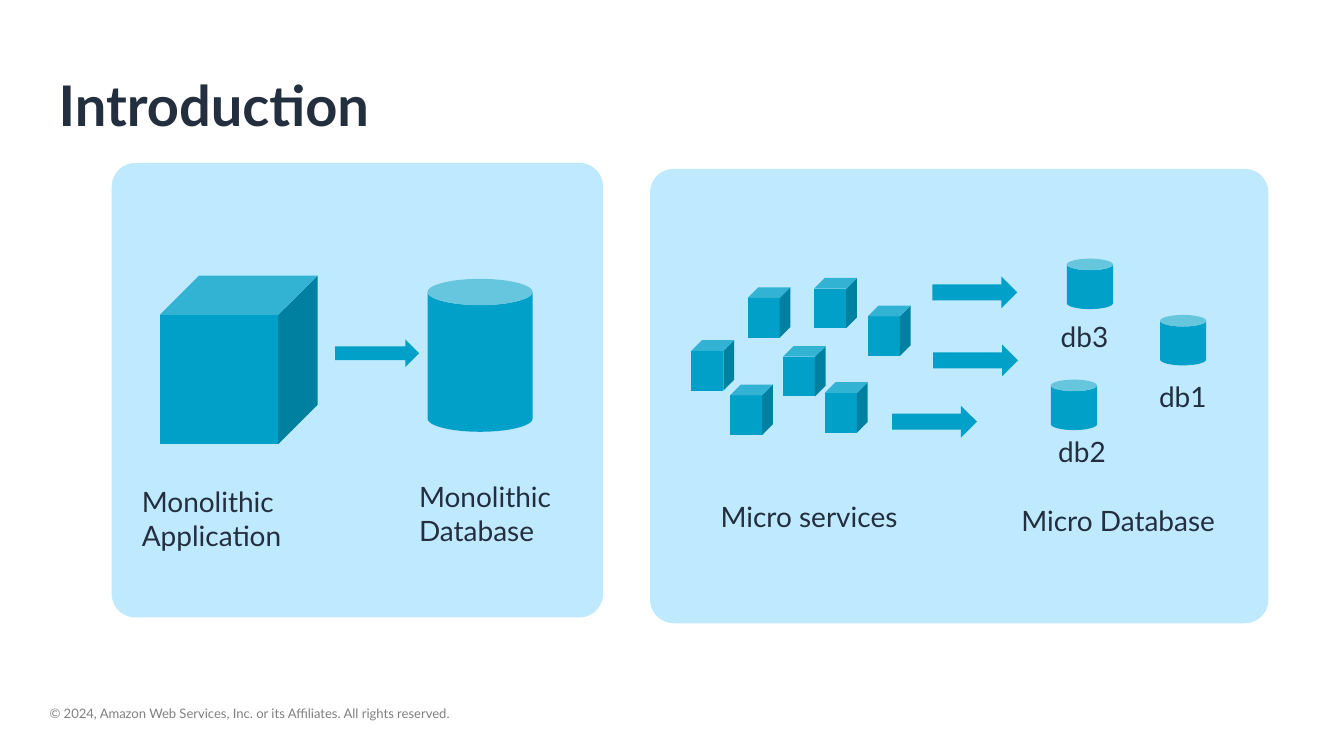
from typing import NamedTuple

from pptx import Presentation
from pptx.dml.color import RGBColor
from pptx.enum.shapes import MSO_SHAPE
from pptx.enum.text import MSO_ANCHOR
from pptx.util import Inches, Pt

COLORS = {"panel": "BFE9FF", "icon": "00A0C8", "ink": "232F3E", "footer": "808080"}
FONT = "Lato"
PANEL_ROUNDING = 0.052


class Icon(NamedTuple):
    kind: MSO_SHAPE
    left: float
    top: float
    width: float
    height: float
    color: str = "icon"


class Label(NamedTuple):
    lines: tuple[str, ...]
    left: float
    top: float
    width: float
    height: float = 0.5
    size: float = 24
    color: str = "ink"
    bold: bool = False
    margin: tuple[float, float] = (0.1, 0.05)
    anchor: MSO_ANCHOR = MSO_ANCHOR.TOP
    wrap: bool = False


PANELS = [
    Icon(MSO_SHAPE.ROUNDED_RECTANGLE, 7.74, 2.01, 7.36, 5.41, "panel"),
    Icon(MSO_SHAPE.ROUNDED_RECTANGLE, 1.33, 1.94, 5.85, 5.41, "panel"),
]
MONOLITH = [
    Icon(MSO_SHAPE.CUBE, 1.9, 3.28, 1.88, 2.01),
    Icon(MSO_SHAPE.RIGHT_ARROW, 3.99, 4.04, 1, 0.33),
    Icon(MSO_SHAPE.CAN, 5.09, 3.32, 1.25, 1.82),
]
SERVICES = [
    Icon(MSO_SHAPE.CUBE, left, top, 0.51, 0.6)
    for left, top in [(8.9, 3.42), (9.69, 3.31), (9.32, 4.12), (9.82, 4.55),
                      (10.33, 3.64), (8.69, 4.58), (8.23, 4.05)]
]
DATABASES = [
    Icon(MSO_SHAPE.CAN, left, top, 0.55, 0.6)
    for left, top in [(12.7, 3.08), (12.51, 4.52), (13.81, 3.75)]
]
ARROWS = [
    Icon(MSO_SHAPE.RIGHT_ARROW, left, top, 1.01, 0.38)
    for left, top in [(11.1, 3.29), (11.11, 4.1), (10.62, 4.83)]
]
LABELS = [
    Label(("© 2024, Amazon Web Services, Inc. or its Affiliates. All rights reserved.",),
          0.59, 8.4, 7.78, 0.19, size=11.2, color="footer", margin=(0, 0), wrap=True),
    Label(("Introduction",), 0.6, 0.43, 13.6, 1.63, size=48, bold=True,
          anchor=MSO_ANCHOR.MIDDLE, wrap=True),
    Label(("Monolithic", "Application"), 1.59, 5.72, 1.94, 0.91),
    Label(("Monolithic", "Database"), 4.89, 5.66, 1.91, 0.91),
    Label(("Micro services",), 8.48, 5.9, 2.32),
    Label(("Micro Database",), 12.06, 5.94, 2.55),
    Label(("db1",), 13.7, 4.47, 0.8),
    Label(("db2",), 12.5, 5.12, 0.8),
    Label(("db3",), 12.53, 3.75, 0.8),
]


def rgb(name: str) -> RGBColor:
    return RGBColor.from_string(COLORS[name])


def draw_icon(s, icon: Icon) -> None:
    sp = s.shapes.add_shape(icon.kind, Inches(icon.left), Inches(icon.top),
                            Inches(icon.width), Inches(icon.height))
    sp.shadow.inherit = False
    sp.fill.solid()
    sp.fill.fore_color.rgb = rgb(icon.color)
    sp.line.fill.background()
    if icon.kind == MSO_SHAPE.ROUNDED_RECTANGLE:
        sp.adjustments[0] = PANEL_ROUNDING


def draw_label(s, label: Label) -> None:
    sp = s.shapes.add_textbox(Inches(label.left), Inches(label.top),
                              Inches(label.width), Inches(label.height))
    tf = sp.text_frame
    tf.word_wrap = label.wrap
    tf.vertical_anchor = label.anchor
    side, edge = label.margin
    tf.margin_left = tf.margin_right = Inches(side)
    tf.margin_top = tf.margin_bottom = Inches(edge)
    for i, line in enumerate(label.lines):
        p = tf.add_paragraph() if i else tf.paragraphs[0]
        r = p.add_run()
        r.text = line
        r.font.name = FONT
        r.font.size = Pt(label.size)
        r.font.bold = label.bold
        r.font.color.rgb = rgb(label.color)


def main() -> None:
    prs = Presentation()
    prs.slide_width, prs.slide_height = Inches(16), Inches(9)
    s = prs.slides.add_slide(prs.slide_layouts[6])
    for icon in PANELS + MONOLITH + SERVICES + DATABASES + ARROWS:
        draw_icon(s, icon)
    for label in LABELS:
        draw_label(s, label)
    prs.save("out.pptx")


if __name__ == "__main__":
    main()
